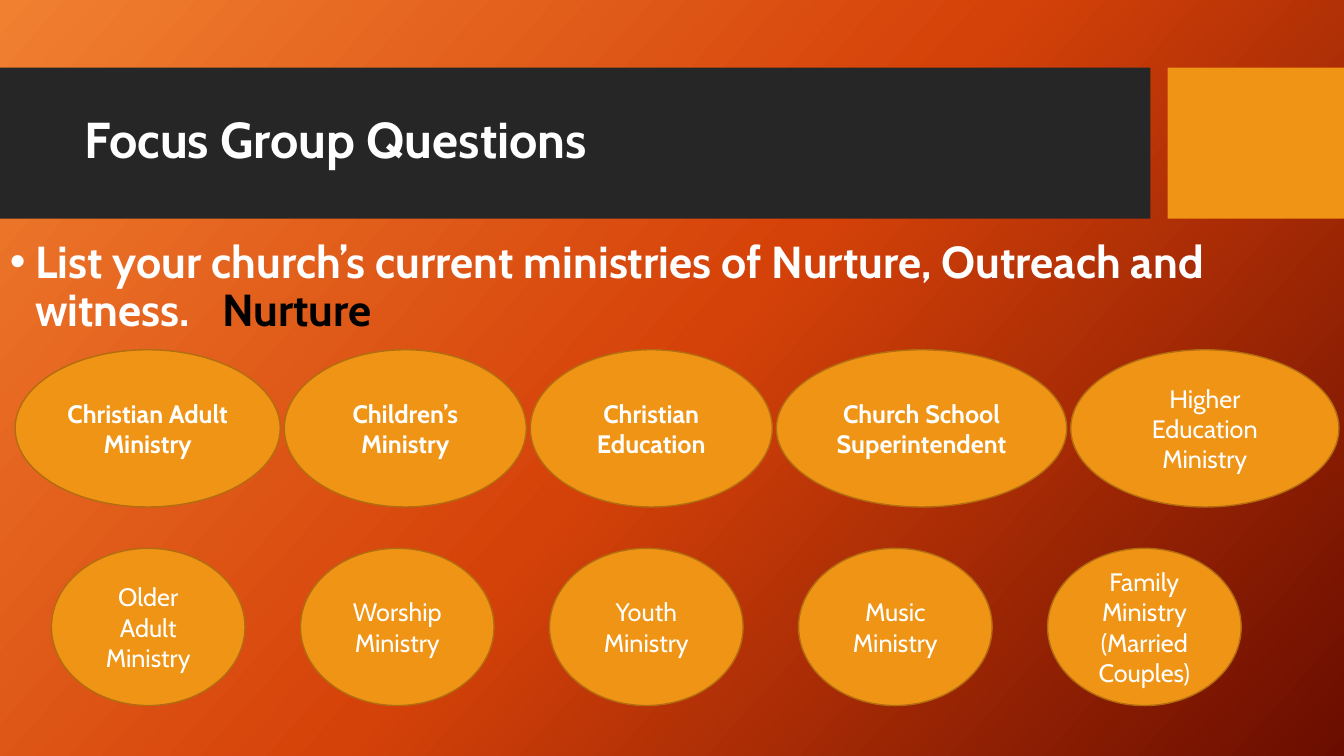
from lxml import etree
from pptx import Presentation
from pptx.dml.color import RGBColor
from pptx.enum.shapes import MSO_SHAPE
from pptx.enum.text import MSO_ANCHOR, PP_ALIGN
from pptx.oxml import parse_xml
from pptx.oxml.ns import nsdecls, qn
from pptx.util import Inches, Pt

RECTANGLE, OVAL = MSO_SHAPE.RECTANGLE, MSO_SHAPE.OVAL
TOP, MIDDLE = MSO_ANCHOR.TOP, MSO_ANCHOR.MIDDLE
LEFT, CENTER = PP_ALIGN.LEFT, PP_ALIGN.CENTER

FONT = "Cabin"
WHITE, BLACK, DARK = "FFFFFF", "000000", "262626"
ORANGE, ORANGE_EDGE = "F09415", "B26D10"
GRADIENT_STOPS = [(0, "F18031"), (50, "D54209"), (100, "6A0D00")]
GRADIENT_ANGLE = 42

TITLE = "Focus Group Questions"
QUESTION = "List your church’s current ministries of Nurture, Outreach and witness."
TOPIC = "Nurture"
TOPIC_GAP = 15.7  # points added to the space before the topic

# Name, oval width, bold
TOP_MINISTRIES = [
    ("Christian Adult Ministry", 2.63, True),
    ("Children’s Ministry", 2.4, True),
    ("Christian Education", 2.4, True),
    ("Church School Superintendent", 2.88, True),
    ("Higher Education Ministry", 2.66, False),
]
BOTTOM_MINISTRIES = [
    (name, 1.92, False)
    for name in (
        "Older Adult Ministry",
        "Worship Ministry",
        "Youth Ministry",
        "Music Ministry",
        "Family Ministry (Married Couples)",
    )
]
# Left, top, gap between ovals, ministries
ROWS = [(0.15, 3.47, 0.04, TOP_MINISTRIES), (0.51, 5.44, 0.55, BOTTOM_MINISTRIES)]
OVAL_HEIGHT = 1.56


def color(value):
    return RGBColor.from_string(value)


def set_background(page):
    stops = "".join(
        f'<a:gs pos="{place * 1000}"><a:srgbClr val="{value}"/></a:gs>'
        for place, value in GRADIENT_STOPS
    )
    background = parse_xml(
        f'<p:bg {nsdecls("p", "a")}><p:bgPr><a:gradFill rotWithShape="1">'
        f'<a:gsLst>{stops}</a:gsLst><a:lin ang="{GRADIENT_ANGLE * 60000}" scaled="0"/>'
        "</a:gradFill><a:effectLst/></p:bgPr></p:bg>"
    )
    page.element.find(qn("p:cSld")).insert(0, background)


def add_block(page, kind, left, top, width, height, fill, edge=None):
    box = page.shapes.add_shape(
        kind, Inches(left), Inches(top), Inches(width), Inches(height)
    )
    box.shadow.inherit = False
    box.fill.solid()
    box.fill.fore_color.rgb = color(fill)
    if edge:
        box.line.color.rgb = color(edge)
        box.line.width = Pt(1)
    else:
        box.line.fill.background()
    return box


def add_text_box(page, left, top, width, height):
    return page.shapes.add_textbox(
        Inches(left), Inches(top), Inches(width), Inches(height)
    )


def start_text(box, anchor, align, line_spacing=1.0):
    """Set up the text frame of a box and return its first paragraph."""
    frame = box.text_frame
    frame.word_wrap = True
    frame.vertical_anchor = anchor
    para = frame.paragraphs[0]
    para.alignment = align
    para.line_spacing = line_spacing
    return para


def add_span(para, text, size, bold=True, value=WHITE):
    span = para.add_run()
    span.text = text
    span.font.name = FONT
    span.font.size = Pt(size)
    span.font.bold = bold
    span.font.color.rgb = color(value)
    return span


def add_bullet(para, indent):
    properties = para._p.get_or_add_pPr()
    properties.set("marL", str(Inches(indent)))
    properties.set("indent", str(-Inches(indent)))
    etree.SubElement(properties, qn("a:buFont")).set("typeface", "Arial")
    etree.SubElement(properties, qn("a:buChar")).set("char", "•")


def add_heading(page):
    add_block(page, RECTANGLE, 0, 0.67, 11.41, 1.5, DARK)
    add_block(page, RECTANGLE, 11.58, 0.67, 1.75, 1.5, ORANGE)
    box = add_text_box(page, 0.74, 0.82, 10.51, 1.18)
    add_span(start_text(box, MIDDLE, LEFT, 0.9), TITLE, 36)


def add_question(page):
    box = add_text_box(page, 0, 2.33, 12.72, 1.1)
    para = start_text(box, TOP, LEFT, 0.9)
    add_bullet(para, 0.25)
    add_span(para, QUESTION, 32)
    gap = add_span(para, " ", 32)
    gap.font._element.set("spc", str(round(TOPIC_GAP * 100)))
    add_span(para, TOPIC, 32, value=BLACK)


def add_ministries(page):
    for left, top, gap, ministries in ROWS:
        for name, width, bold in ministries:
            box = add_block(
                page, OVAL, left, top, width, OVAL_HEIGHT, ORANGE, ORANGE_EDGE
            )
            add_span(start_text(box, MIDDLE, CENTER), name, 18, bold)
            left += width + gap


def main():
    deck = Presentation()
    deck.slide_width, deck.slide_height = Inches(13.33), Inches(7.5)
    page = deck.slides.add_slide(deck.slide_layouts[6])
    set_background(page)
    add_heading(page)
    add_question(page)
    add_ministries(page)
    deck.save("out.pptx")


if __name__ == "__main__":
    main()
